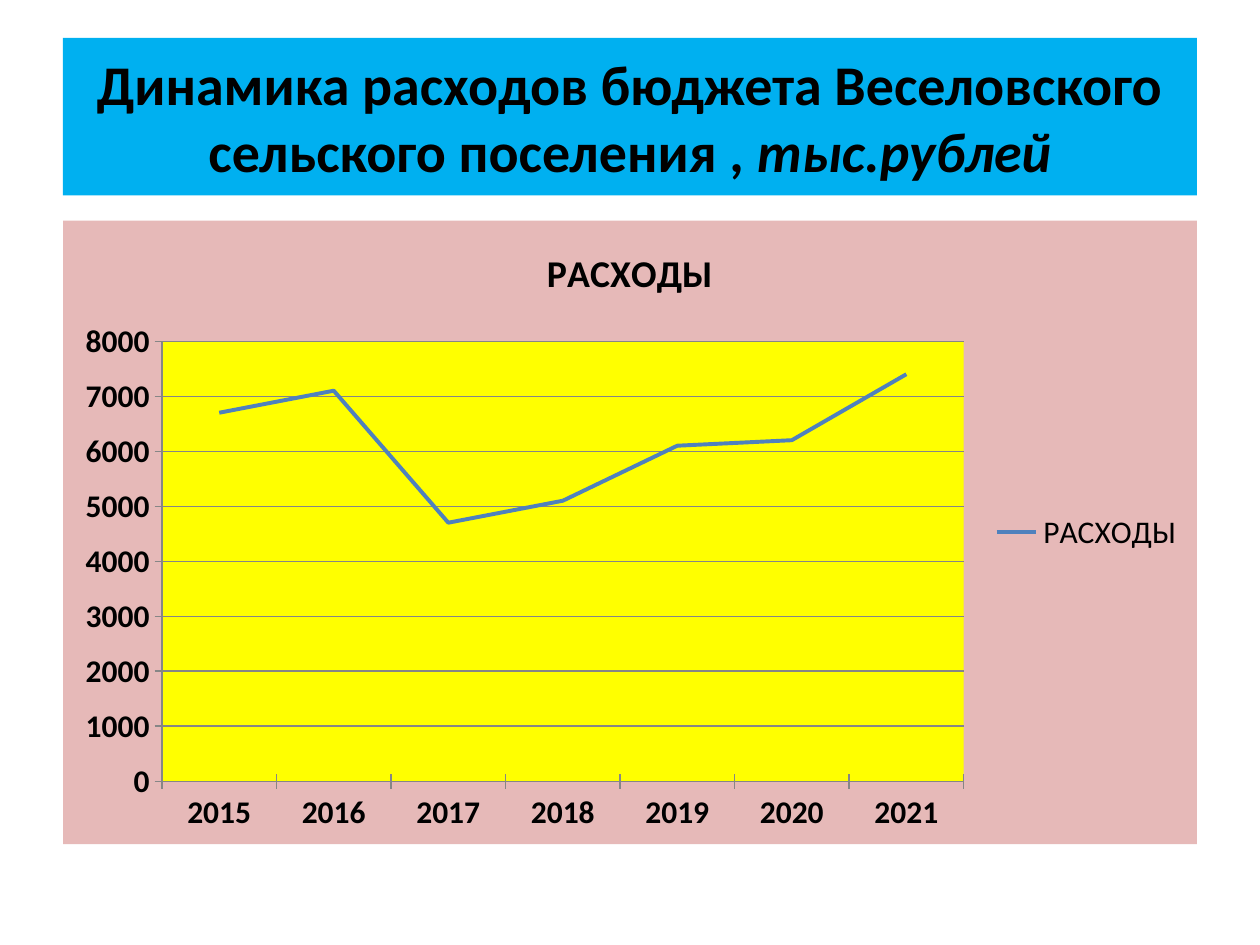
from dataclasses import dataclass
from lxml import etree
from pptx import Presentation
from pptx.chart.data import CategoryChartData as ChartData
from pptx.dml.color import RGBColor as RGB
from pptx.enum.chart import XL_CHART_TYPE as Kind, XL_LEGEND_POSITION as Side
from pptx.enum.chart import XL_MARKER_STYLE as Mark, XL_TICK_MARK as Tick
from pptx.enum.shapes import MSO_SHAPE as Form
from pptx.enum.text import MSO_ANCHOR as Anchor, PP_ALIGN as Align
from pptx.oxml import parse_xml
from pptx.util import Pt


@dataclass(frozen=True)
class Theme:
    face: str = "Calibri"
    ink: str = "000000"
    band: str = "00B0F0"
    panel: str = "E6B9B8"
    plot: str = "FFFF00"
    line: str = "4F81BD"
    grid: str = "868686"
    head: float = 32
    title: float = 21.6
    body: float = 18


THEME = Theme()
NAME = "РАСХОДЫ"
COSTS = {
    "2015": 6700, "2016": 7100, "2017": 4700, "2018": 5100,
    "2019": 6100, "2020": 6200, "2021": 7400,
}
HEAD = [
    ("Динамика расходов бюджета Веселовского сельского поселения , ", False),
    ("тыс.рублей", True),
]


def style(font, size, **form):
    base = {"name": THEME.face, "size": Pt(size)}
    for key, value in {**base, **form}.items():
        setattr(font, key, value)
    font.color.rgb = RGB.from_string(THEME.ink)


def stroke(line, color, width):
    line.color.rgb = RGB.from_string(color)
    line.width = Pt(width)


def fill(color):
    return parse_xml(
        '<c:spPr xmlns:c="http://schemas.openxmlformats.org/drawingml/2006/chart"'
        ' xmlns:a="http://schemas.openxmlformats.org/drawingml/2006/main">'
        f'<a:solidFill><a:srgbClr val="{color}"/></a:solidFill>'
        '<a:ln><a:noFill/></a:ln></c:spPr>'
    )


def add_head(slide, box):
    band = slide.shapes.add_shape(Form.RECTANGLE, *map(Pt, box))
    band.shadow.inherit = False
    band.fill.solid()
    band.fill.fore_color.rgb = RGB.from_string(THEME.band)
    band.line.fill.background()
    frame = band.text_frame
    frame.word_wrap = True
    frame.vertical_anchor = Anchor.MIDDLE
    para = frame.paragraphs[0]
    para.alignment = Align.CENTER
    for text, slant in HEAD:
        run = para.add_run()
        run.text = text
        style(run.font, THEME.head, bold=True, italic=slant)


def add_costs(slide, box):
    data = ChartData()
    data.categories = list(COSTS)
    data.add_series(NAME, list(COSTS.values()))
    chart = slide.shapes.add_chart(Kind.LINE_STACKED, *map(Pt, box), data).chart
    style(chart.font, THEME.body)

    chart.has_title = True
    frame = chart.chart_title.text_frame
    frame.text = NAME
    style(frame.paragraphs[0].runs[0].font, THEME.title, bold=True)
    chart.chart_title.include_in_layout = False

    chart.has_legend = True
    chart.legend.position = Side.RIGHT
    chart.legend.include_in_layout = False
    style(chart.legend.font, THEME.body)

    for axis in (chart.category_axis, chart.value_axis):
        axis.major_tick_mark = Tick.CROSS
        style(axis.tick_labels.font, THEME.body, bold=True)
        stroke(axis.format.line, THEME.grid, 0.75)
    chart.value_axis.has_major_gridlines = True
    stroke(chart.value_axis.major_gridlines.format.line, THEME.grid, 0.75)

    plot = chart.plots[0]
    plot.vary_by_categories = False
    costs = plot.series[0]
    costs.smooth = False
    costs.marker.style = Mark.NONE
    stroke(costs.format.line, THEME.line, 2.25)

    root = chart.element
    ns = {"c": etree.QName(root).namespace}
    root.find("c:chart", ns).addnext(fill(THEME.panel))
    root.find("c:chart/c:plotArea", ns).append(fill(THEME.plot))


def main():
    deck = Presentation()
    deck.slide_width, deck.slide_height = Pt(720), Pt(540)
    slide = deck.slides.add_slide(deck.slide_layouts[6])
    add_head(slide, (36, 21.6, 648, 90))
    add_costs(slide, (36, 126, 648, 356.4))
    deck.save("out.pptx")


if __name__ == "__main__":
    main()
